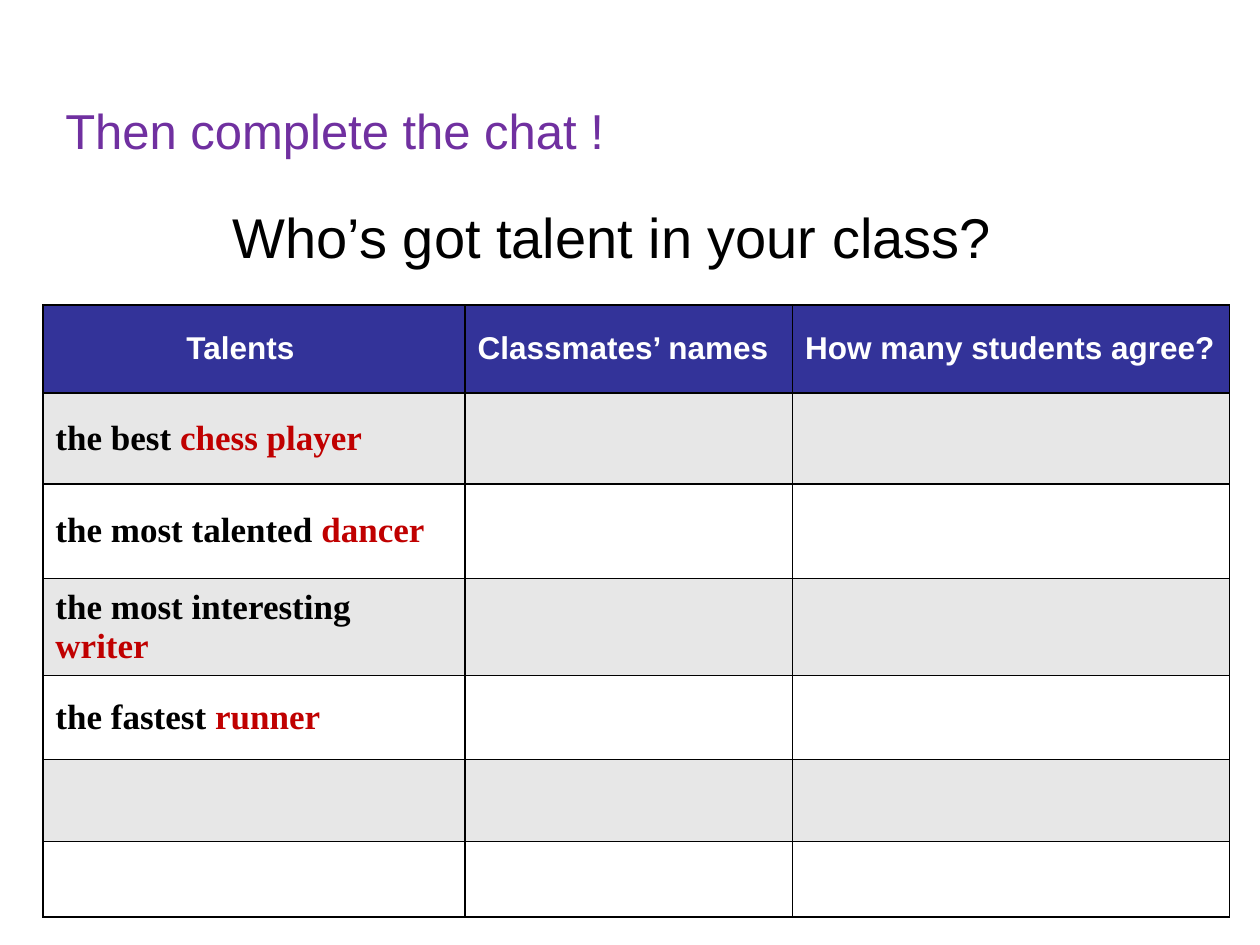
import pptx
import pptx.util
import pptx.dml.color
import pptx.enum.text
import pptx.oxml
import lxml.etree
from pptx.util import Inches

COLORS = {
    "ink": "000000",
    "instruction": "7030A0",
    "header": "333399",
    "header_text": "FFFFFF",
    "talent": "C00000",
    "band": "E7E7E7",
    "plain": "FFFFFF",
}


def add_run(paragraph, words, size, color, font="Arial", bold=False):
    run = paragraph.add_run()
    run.text = words
    run.font.size = pptx.util.Pt(size)
    run.font.name = font
    run.font.bold = bold
    run.font.color.rgb = pptx.dml.color.RGBColor.from_string(COLORS[color])


def style_cell(cell, fill):
    cell.vertical_anchor = pptx.enum.text.MSO_ANCHOR.MIDDLE
    properties = cell._tc.get_or_add_tcPr()
    for side in ("lnL", "lnR", "lnT", "lnB"):
        border = lxml.etree.SubElement(properties, pptx.oxml.ns.qn(f"a:{side}"), w="12700")
        line_fill = lxml.etree.SubElement(border, pptx.oxml.ns.qn("a:solidFill"))
        lxml.etree.SubElement(line_fill, pptx.oxml.ns.qn("a:srgbClr"), val=COLORS["ink"])
    cell.fill.solid()
    cell.fill.fore_color.rgb = pptx.dml.color.RGBColor.from_string(COLORS[fill])


deck = pptx.Presentation()
deck.slide_width = Inches(10)
deck.slide_height = Inches(7.5)
slide = deck.slides.add_slide(deck.slide_layouts[6])

headings = [
    ("Who’s got talent in your class?", 1.75, 1.56, 8.08, 0.64, 32, "ink"),
    ("Then complete the chat !", 0.42, 0.75, 5.92, 0.57, 28, "instruction"),
]
for words, left, top, width, height, size, color in headings:
    heading = slide.shapes.add_textbox(Inches(left), Inches(top), Inches(width), Inches(height))
    heading.text_frame.word_wrap = True
    heading.text_frame.auto_size = pptx.enum.text.MSO_AUTO_SIZE.SHAPE_TO_FIT_TEXT
    add_run(heading.text_frame.paragraphs[0], words, size, color)

column_widths = [3.35, 2.6, 3.47]
row_heights = [0.7, 0.72, 0.75, 0.77, 0.67, 0.65, 0.6]
survey = slide.shapes.add_table(
    len(row_heights), len(column_widths), Inches(0.34), Inches(2.42), Inches(9.42), Inches(4.85)
).table
for column, width in zip(survey.columns, column_widths):
    column.width = Inches(width)
for row_number, (row, height) in enumerate(zip(survey.rows, row_heights)):
    row.height = Inches(height)
    fill = "header" if row_number == 0 else "band" if row_number % 2 else "plain"
    for cell in row.cells:
        style_cell(cell, fill)

questions = ["Talents", "Classmates’ names", "How many students agree?"]
for cell, question in zip(survey.rows[0].cells, questions):
    add_run(cell.text_frame.paragraphs[0], question, 18, "header_text", bold=True)
survey.cell(0, 0).margin_left = Inches(1.14)

talents = [
    ("the best ", "chess player"),
    ("the most talented ", "dancer"),
    ("the most interesting ", "writer"),
    ("the fastest ", "runner"),
]
for row_number, (praise, talent) in enumerate(talents, start=1):
    entry = survey.cell(row_number, 0).text_frame.paragraphs[0]
    add_run(entry, praise, 20, "ink", "Times New Roman", True)
    add_run(entry, talent, 20, "talent", "Times New Roman", True)

deck.save("out.pptx")
